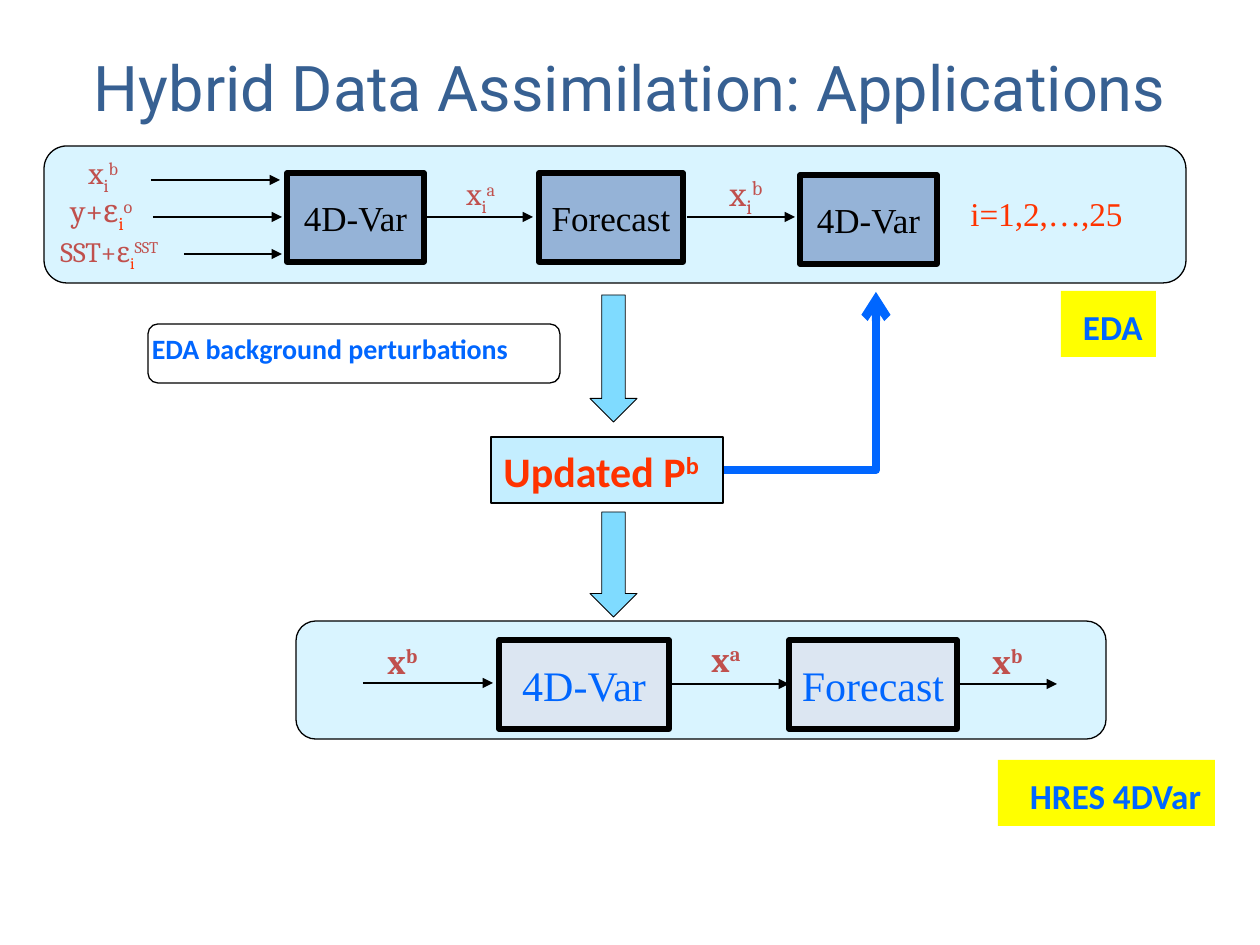
import pptx
import pptx.util
import pptx.dml.color
import pptx.enum.shapes
import pptx.enum.text
import pptx.oxml.ns
from dataclasses import dataclass
from lxml import etree

SHAPE = pptx.enum.shapes.MSO_SHAPE
CONNECTOR = pptx.enum.shapes.MSO_CONNECTOR
ALIGN = pptx.enum.text.PP_ALIGN
ANCHOR = pptx.enum.text.MSO_ANCHOR
SUB, SUPER = -25000, 30000
qn = pptx.oxml.ns.qn


@dataclass(frozen=True)
class Theme:
    title: str = "376092"
    black: str = "000000"
    blue: str = "0066FF"
    red: str = "FF3300"
    brick: str = "C0504D"
    sky: str = "00B8FF"
    yellow: str = "FFFF00"
    steel: str = "95B3D7"
    pale: str = "DCE6F2"
    heading: str = "Roboto"
    sans: str = "Calibri"
    serif: str = "Times New Roman"
    math: str = "Cambria"
    title_size: int = 36
    large: int = 24
    medium: int = 20
    index: int = 19
    small: int = 18
    tiny: int = 16


class Diagram:
    def __init__(self, slide, theme):
        self.slide, self.theme = slide, theme

    def px(self, *lengths):
        return [pptx.util.Emu(round(length * 914400 / 126)) for length in lengths]

    def color(self, value):
        return pptx.dml.color.RGBColor.from_string(value)

    def add_text(self, shape, runs, size, font, color, bold=False, align=ALIGN.LEFT,
                 spacing=1.0, **frame_format):
        """Fill a shape with runs given as (text, baseline, optional colour)."""
        frame = shape.text_frame
        for name, value in {"word_wrap": False, **frame_format}.items():
            setattr(frame, name, value)
        paragraph = frame.paragraphs[0]
        paragraph.alignment, paragraph.line_spacing = align, spacing
        if isinstance(runs, str):
            runs = [(runs, 0)]
        for text, baseline, *own_color in runs:
            run = paragraph.add_run()
            run.text = text
            font_format = {"size": pptx.util.Pt(size), "name": font, "bold": bold}
            for name, value in font_format.items():
                setattr(run.font, name, value)
            run.font.color.rgb = self.color(own_color[0] if own_color else color)
            if baseline:
                run.font._element.set("baseline", str(baseline))

    def title(self, text, box):
        shape = self.slide.shapes.title
        for name, value in zip(("left", "top", "width", "height"), self.px(*box)):
            setattr(shape, name, value)
        self.add_text(shape, text, self.theme.title_size, self.theme.heading,
                      self.theme.title, align=ALIGN.CENTER, word_wrap=True,
                      vertical_anchor=ANCHOR.MIDDLE)

    def shape(self, kind, box, fill=None, alpha=100, line=None):
        shape = self.slide.shapes.add_shape(kind, *self.px(*box))
        shape.shadow.inherit = False
        if fill:
            shape.fill.solid()
            shape.fill.fore_color.rgb = self.color(fill)
            if alpha < 100:
                color = shape._element.spPr.find(".//" + qn("a:srgbClr"))
                etree.SubElement(color, qn("a:alpha")).set("val", str(alpha * 1000))
        else:
            shape.fill.background()
        if line:
            shape.line.color.rgb = self.color(self.theme.black)
            shape.line.width = pptx.util.Pt(line)
        else:
            shape.line.fill.background()
        return shape

    def panel(self, box):
        self.shape(SHAPE.ROUNDED_RECTANGLE, box, self.theme.sky, 15, 0.75)

    def step(self, text, box, fill, size, color):
        shape = self.shape(SHAPE.RECTANGLE, box, fill, line=3)
        self.add_text(shape, text, size, self.theme.serif, color, align=ALIGN.CENTER,
                      vertical_anchor=ANCHOR.MIDDLE)

    def down_arrow(self, top, height):
        self.shape(SHAPE.DOWN_ARROW, (590, top, 47, height), self.theme.sky, 50, 0.5)

    def tag(self, text, box, indent):
        shape = self.shape(SHAPE.RECTANGLE, box, self.theme.yellow)
        left, top, right = self.px(indent, 13, 0)
        self.add_text(shape, text, self.theme.medium, self.theme.sans, self.theme.blue,
                      bold=True, spacing=1.04, vertical_anchor=ANCHOR.TOP,
                      word_wrap=True, margin_left=left, margin_top=top,
                      margin_right=right)

    def label(self, runs, box, size, font=None, color=None, **text_format):
        shape = self.slide.shapes.add_textbox(*self.px(*box))
        self.add_text(shape, runs, size, font or self.theme.math,
                      color or self.theme.brick, **text_format)

    def arrow(self, start, end, color=None, width=1, head="triangle", bent=False):
        kind = CONNECTOR.ELBOW if bent else CONNECTOR.STRAIGHT
        connector = self.slide.shapes.add_connector(kind, *self.px(*start, *end))
        connector.line.color.rgb = self.color(color or self.theme.black)
        connector.line.width = pptx.util.Pt(width)
        properties = connector._element.spPr
        if bent:
            properties.find(qn("a:prstGeom")).set("prst", "bentConnector2")
        etree.SubElement(properties.find(qn("a:ln")), qn("a:tailEnd")).set("type", head)
        etree.SubElement(properties, qn("a:effectLst"))


def main():
    presentation = pptx.Presentation()
    presentation.slide_width = pptx.util.Inches(10)
    presentation.slide_height = pptx.util.Inches(7.5)
    slide = presentation.slides.add_slide(presentation.slide_layouts[5])
    theme = Theme()
    diagram = Diagram(slide, theme)

    diagram.title("Hybrid Data Assimilation: Applications", (63, 38, 1134, 97))

    # Perturbations note
    diagram.shape(SHAPE.ROUNDED_RECTANGLE, (148, 324, 412, 59), line=0.75)
    diagram.label("EDA background perturbations", (136, 324, 388, 48), theme.tiny,
                  theme.sans, theme.blue, bold=True, align=ALIGN.CENTER,
                  spacing=1.04, word_wrap=True)

    # System tags
    diagram.tag("EDA", (1061, 291, 95, 66), 22)
    diagram.tag("HRES 4DVar", (998, 760, 217, 66), 32)

    # High-resolution cycle
    diagram.panel((296, 621, 810, 118))
    for text, left, width in (("4D-Var", 499, 170), ("Forecast", 789, 168)):
        diagram.step(text, (left, 640, width, 89), theme.pale, theme.large, theme.blue)
    for left, right, y in ((363, 493, 683), (670, 789, 684), (955, 1057, 684)):
        diagram.arrow((left, y), (right, y))
    for mark, left, top in (("b", 375, 633), ("a", 699, 631), ("b", 980, 633)):
        diagram.label([("x", 0), (mark, SUPER)], (left, top, 56, 55), theme.medium,
                      bold=True)

    # Covariance update and feedback
    diagram.down_arrow(295, 127)
    diagram.down_arrow(512, 105)
    diagram.arrow((723, 470), (876, 292), theme.blue, 4.75, "arrow", bent=True)
    update = diagram.shape(SHAPE.RECTANGLE, (491, 437, 232, 66), theme.sky, 23, 0.75)
    diagram.add_text(update, [("Updated P", 0), ("b", SUPER)], theme.large, theme.sans,
                     theme.red, bold=True, spacing=1.04, vertical_anchor=ANCHOR.TOP)

    # Ensemble cycle
    diagram.panel((44, 146, 1142, 137))
    for text, left, top, width in (("4D-Var", 287, 173, 137), ("Forecast", 539, 173, 144),
                                   ("4D-Var", 800, 175, 137)):
        diagram.step(text, (left, top, width, 89), theme.steel, theme.medium, theme.black)
    for left, right, y in ((151, 280, 180), (153, 282, 217), (184, 282, 254),
                           (425, 533, 217), (687, 795, 217)):
        diagram.arrow((left, y), (right, y))

    # Ensemble variables
    for base, mark, box, size, sub_color in (
            ("x", "b", (76, 147, 58, 50), theme.small, theme.brick),
            ("y+ε", "o", (58, 185, 115, 50), theme.small, theme.red),
            ("SST+ε", "SST", (48, 228, 165, 47), theme.tiny, theme.red),
            ("x", "a", (454, 168, 57, 50), theme.small, theme.brick),
            ("x", "b", (717, 165, 62, 55), theme.medium, theme.brick)):
        diagram.label([(base, 0), ("i", SUB, sub_color), (mark, SUPER)], box, size)
    diagram.label("i=1,2,…,25", (958, 186, 190, 53), theme.index, theme.serif,
                  theme.red, spacing=1.04)

    presentation.save("out.pptx")


if __name__ == "__main__":
    main()
